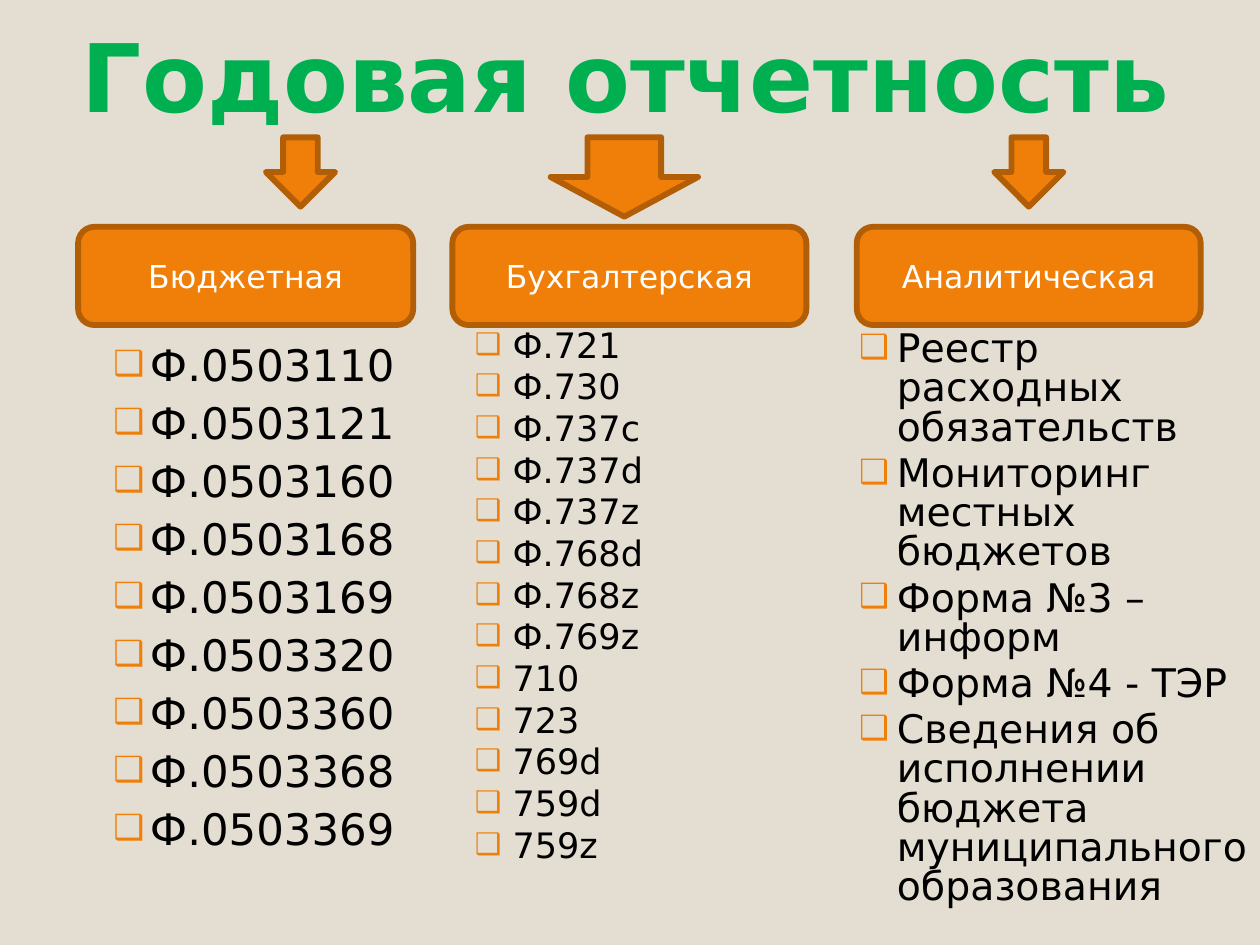
from lxml import etree
from pptx import Presentation
from pptx.dml.color import RGBColor
from pptx.enum.shapes import MSO_SHAPE
from pptx.enum.text import MSO_ANCHOR, MSO_AUTO_SIZE, PP_ALIGN
from pptx.oxml.ns import qn
from pptx.util import Inches, Pt

ROUNDED = MSO_SHAPE.ROUNDED_RECTANGLE
DOWN_ARROW = MSO_SHAPE.DOWN_ARROW
MIDDLE, TOP, BOTTOM = MSO_ANCHOR.MIDDLE, MSO_ANCHOR.TOP, MSO_ANCHOR.BOTTOM
LEFT, CENTER = PP_ALIGN.LEFT, PP_ALIGN.CENTER
NO_FIT = MSO_AUTO_SIZE.NONE

FONT = "DejaVu Sans"
ORANGE, BROWN, GREEN = "F07F09", "B25E07", "00B050"
BLACK, WHITE, BEIGE = "000000", "FFFFFF", "E3DED1"

BUDGET_FORMS = [f"Ф.0503{code}" for code in (110, 121, 160, 168, 169, 320, 360, 368, 369)]
ACCOUNTING_FORMS = [
    "Ф.721", "Ф.730", "Ф.737с", "Ф.737d", "Ф.737z", "Ф.768d", "Ф.768z", "Ф.769z",
    "710", "723", "769d", "759d", "759z",
]
ANALYTIC_FORMS = [
    "Реестр расходных обязательств",
    "Мониторинг местных бюджетов",
    "Форма №3 – информ",
    "Форма №4 - ТЭР",
    "Сведения об исполнении бюджета муниципального образования",
]


def paint(color_format, color):
    color_format.rgb = RGBColor.from_string(color)


def fill(target, color):
    target.fill.solid()
    paint(target.fill.fore_color, color)


def place(shape, box):
    shape.left, shape.top, shape.width, shape.height = map(Inches, box)


def write(para, text, size, color=BLACK, bold=False, align=LEFT, before=0, spacing=1.0):
    para.alignment = align
    para.space_before = Pt(before)
    para.space_after = Pt(0)
    para.line_spacing = spacing
    span = para.add_run()
    span.text = text
    span.font.name = FONT
    span.font.size = Pt(size)
    span.font.bold = bold
    paint(span.font.color, color)


def add_bullet(para, indent, percent):
    properties = para._p.get_or_add_pPr()
    properties.set("marL", str(Inches(indent)))
    properties.set("indent", str(-Inches(indent)))
    color = etree.SubElement(properties, qn("a:buClr"))
    etree.SubElement(color, qn("a:srgbClr"), val=ORANGE)
    etree.SubElement(properties, qn("a:buSzPct"), val=str(percent * 1000))
    etree.SubElement(properties, qn("a:buFont"), typeface=FONT)
    etree.SubElement(properties, qn("a:buChar"), char="❑")


def fill_title(shape, box):
    place(shape, box)
    frame = shape.text_frame
    frame.auto_size = NO_FIT
    frame.vertical_anchor = BOTTOM
    write(frame.paragraphs[0], "Годовая отчетность", size=54, color=GREEN, bold=True)


def fill_list(shape, box, items, indent=0.3, percent=85, margins=(0.1, 0.05, 0.02, 0.05), **style):
    place(shape, box)
    frame = shape.text_frame
    frame.word_wrap = True
    frame.auto_size = NO_FIT
    frame.vertical_anchor = TOP
    (frame.margin_left, frame.margin_top,
     frame.margin_right, frame.margin_bottom) = map(Inches, margins)
    for number, item in enumerate(items):
        para = frame.add_paragraph() if number else frame.paragraphs[0]
        write(para, item, **style)
        add_bullet(para, indent, percent)


def add_block(page, kind, box):
    block = page.shapes.add_shape(kind, *map(Inches, box))
    block.shadow.inherit = False
    fill(block, ORANGE)
    paint(block.line.color, BROWN)
    block.line.width = Pt(3.35)
    return block


def add_heading(page, box, text, arrow_box):
    frame = add_block(page, ROUNDED, box).text_frame
    frame.word_wrap = True
    frame.vertical_anchor = MIDDLE
    write(frame.paragraphs[0], text, size=18, color=WHITE, align=CENTER)
    add_block(page, DOWN_ARROW, arrow_box)


def main():
    deck = Presentation()
    deck.slide_width, deck.slide_height = Inches(10), Inches(7.5)
    page = deck.slides.add_slide(deck.slide_layouts[1])
    fill(page.background, BEIGE)

    fill_title(page.shapes.title, (0.55, 0.44, 8.95, 0.65))
    fill_list(page.placeholders[1], (0.7, 2.58, 2.66, 4.53), BUDGET_FORMS, indent=0.29,
              percent=80, margins=(0.2, 0.1, 0.1, 0.05), size=24.8, before=3.4)

    headings = [
        ("Бюджетная", 0.62, 2.66, (2.11, 1.09, 0.55, 0.55)),
        ("Бухгалтерская", 3.59, 2.81, (4.37, 1.09, 1.17, 0.63)),
        ("Аналитическая", 6.8, 2.73, (7.89, 1.09, 0.55, 0.55)),
    ]
    for text, left, width, arrow_box in headings:
        add_heading(page, (left, 1.8, width, 0.78), text, arrow_box)

    lists = [
        (ACCOUNTING_FORMS, (3.67, 2.58, 2.66, 4.4), 20, 4.6, 0.8),
        (ANALYTIC_FORMS, (6.72, 2.58, 3.28, 4.53), 22.5, 4, 0.83),
    ]
    for items, box, size, before, spacing in lists:
        text_box = page.shapes.add_textbox(*map(Inches, box))
        fill_list(text_box, box, items, size=size, before=before, spacing=spacing)

    deck.save("out.pptx")


if __name__ == "__main__":
    main()
